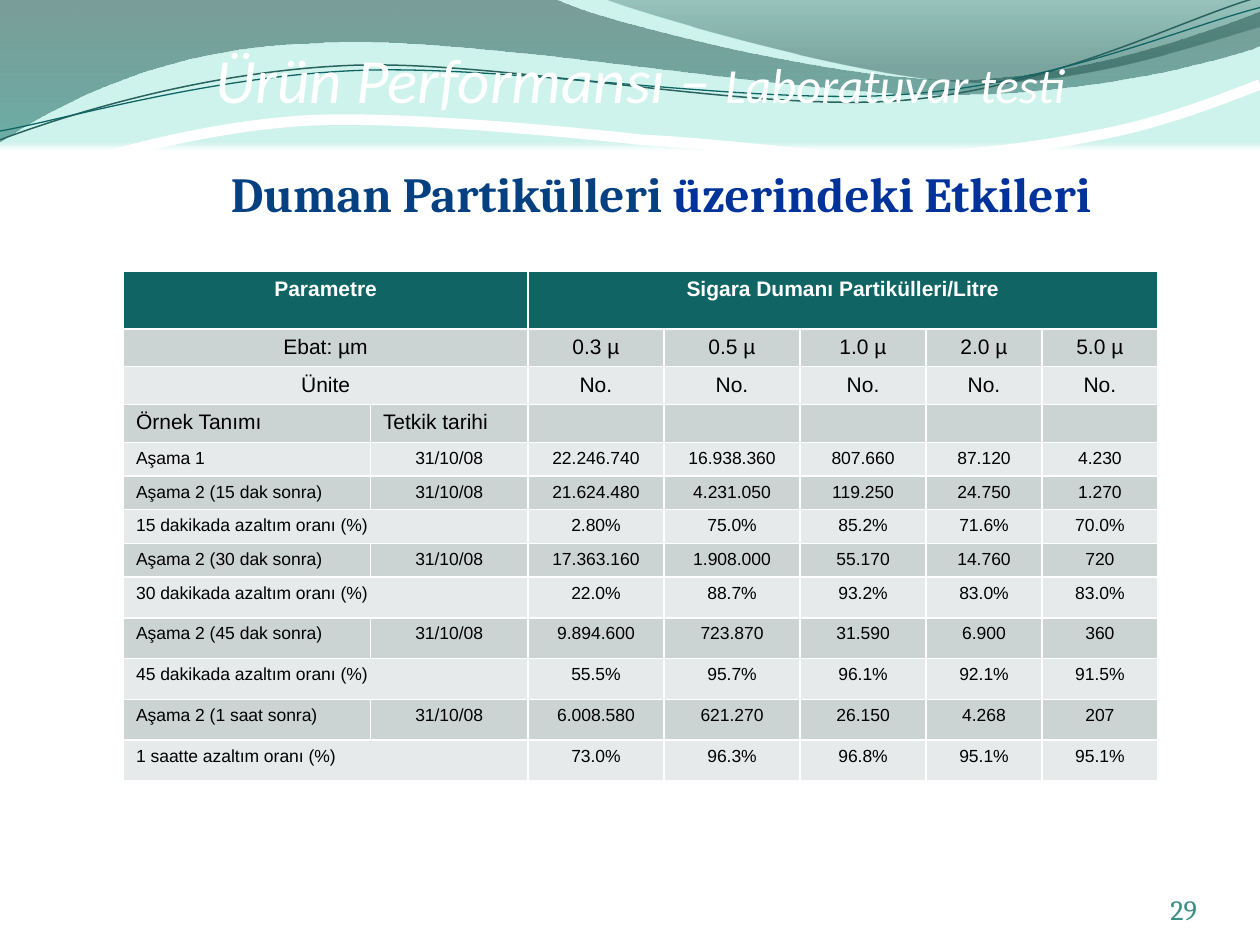
import pptx
import pptx.util
import pptx.dml.color
import pptx.enum.text
import pptx.oxml
import pptx.oxml.ns
import lxml.etree

COLORS = {
    "mint": "CEF2EC", "white": "FFFFFF", "black": "000000", "teal": "106464",
    "deep": "153A36", "sea": "1C746C", "pine": "1D5953", "moss": "154944",
    "thread": "2A625D", "number": "3E8E87", "navy": "054180", "blue": "00339A",
    "band": "CCD3D3", "pale": "E7EAEA",
}
WIDTH, HEIGHT = 10, 7.5

WAVES = {
    "left": [(0, 0), (4.4, -0.01), (4.76, 0.17, 6.64, 0.63, 7.58, 0.63),
             (8.53, 0.63, 9.58, 0.26, 10, 0.09), (10.01, 0.36),
             (9.83, 0.44, 8.7, 0.76, 7.46, 0.75), (6.22, 0.75, 3.82, 0.28, 2.57, 0.34),
             (1.29, 0.36, 0.46, 0.83, -0.01, 1.13)],
    "right": [(4.79, -0.01), (5.09, 0.11, 6.82, 0.62, 7.69, 0.65),
              (8.56, 0.69, 9.61, 0.32, 10, 0.21), (10, 0)],
    "upper thread": [(0, 1.11), (0.48, 0.93, 1.58, 0.57, 2.77, 0.52),
                     (3.95, 0.47, 5.93, 0.89, 7.13, 0.8), (8.33, 0.71, 9.38, 0.15, 9.98, -0.02)],
    "lower thread": [(0, 1.04), (0.47, 0.96, 1.64, 0.61, 2.83, 0.56),
                     (4.03, 0.51, 5.97, 0.84, 7.17, 0.75), (8.36, 0.67, 9.41, 0.21, 10, 0.06)],
    "ribbon": [(0.03, 1.48), (0.78, 1.25, 1.54, 1.02, 2.38, 0.96),
               (3.23, 0.9, 5.1, 1.11, 5.1, 1.11), (5.87, 1.15, 6.41, 1.25, 7, 1.25),
               (7.59, 1.25, 8.17, 1.18, 8.67, 1.08), (9.17, 0.99, 9.59, 0.83, 10, 0.67)],
}

TITLE = [("Ürün Performansı – ", 36, "white"), ("Laboratuvar testi", 28, "white")]
SUBTITLE = [("Duman Partikülleri ", 28, "navy"), ("üzerindeki Etkileri", 28, "blue")]
PAGE = [("29", 16, "number")]

DATE = "31/10/08"
RESULTS = [
    ("Parametre", "", ["Sigara Dumanı Partikülleri/Litre"]),
    ("Ebat: µm", "", ["0.3 µ", "0.5 µ", "1.0 µ", "2.0 µ", "5.0 µ"]),
    ("Ünite", "", ["No."] * 5),
    ("Örnek Tanımı", "Tetkik tarihi", [""] * 5),
    ("Aşama 1", DATE, ["22.246.740", "16.938.360", "807.660", "87.120", "4.230"]),
    ("Aşama 2 (15 dak sonra)", DATE, ["21.624.480", "4.231.050", "119.250", "24.750", "1.270"]),
    ("15 dakikada azaltım oranı (%)", "", ["2.80%", "75.0%", "85.2%", "71.6%", "70.0%"]),
    ("Aşama 2 (30 dak sonra)", DATE, ["17.363.160", "1.908.000", "55.170", "14.760", "720"]),
    ("30 dakikada azaltım oranı (%)", "", ["22.0%", "88.7%", "93.2%", "83.0%", "83.0%"]),
    ("Aşama 2 (45 dak sonra)", DATE, ["9.894.600", "723.870", "31.590", "6.900", "360"]),
    ("45 dakikada azaltım oranı (%)", "", ["55.5%", "95.7%", "96.1%", "92.1%", "91.5%"]),
    ("Aşama 2 (1 saat sonra)", DATE, ["6.008.580", "621.270", "26.150", "4.268", "207"]),
    ("1 saatte azaltım oranı (%)", "", ["73.0%", "96.3%", "96.8%", "95.1%", "95.1%"]),
]
COLUMN_WIDTHS = [1.96, 1.25, 1.08, 1.08, 1, 0.92, 0.92]
TALL_ROWS, TALL_SHARE = 5, 1.62
ROW_HEIGHTS = [0.46, 0.29, 0.24, 0.28] + [0.25] * 4 + [TALL_SHARE / TALL_ROWS] * TALL_ROWS
HEADING_ROWS, CENTRED_LABELS = 4, 3

ALIGN = pptx.enum.text.PP_ALIGN
ANCHOR = pptx.enum.text.MSO_ANCHOR
inches = pptx.util.Inches
qn = pptx.oxml.ns.qn


def rgb(name):
    return pptx.dml.color.RGBColor.from_string(COLORS[name])


def style(font, family, size, color, bold=False, italic=False):
    font.name, font.size = family, pptx.util.Pt(size)
    font.bold, font.italic = bold, italic
    font.color.rgb = rgb(color)


def paint_gradient(fill, stops):
    fill.gradient()
    fill.gradient_angle = 270
    for stop, (position, color, _) in zip(fill.gradient_stops, stops):
        stop.position = position
        stop.color.rgb = rgb(color)
    tints = fill._xPr.iter(qn("a:srgbClr"))
    for tint, (_, _, opacity) in zip(tints, stops):
        if opacity < 100:
            lxml.etree.SubElement(tint, qn("a:alpha")).set("val", str(opacity * 1000))


def bend(wave, segments):
    outline = next(wave._element.iter(qn("a:path")))
    for straight, segment in zip(list(outline)[1:], segments[1:]):
        if len(segment) == 2:
            continue
        curve = lxml.etree.Element(qn("a:cubicBezTo"))
        for x, y in zip(segment[::2], segment[1::2]):
            point = lxml.etree.SubElement(curve, qn("a:pt"))
            point.set("x", str(inches(x) - wave.left))
            point.set("y", str(inches(y) - wave.top))
        outline.replace(straight, curve)


def draw_wave(slide, key, stops=None, stroke=None):
    segments = WAVES[key]
    joints = [tuple(map(inches, segment[-2:])) for segment in segments]
    builder = slide.shapes.build_freeform(*joints[0])
    builder.add_line_segments(joints[1:], close=stops is not None)
    wave = builder.convert_to_shape()
    bend(wave, segments)
    wave.shadow.inherit = False
    if stops:
        paint_gradient(wave.fill, stops)
        wave.line.fill.background()
    else:
        color, weight = stroke
        wave.fill.background()
        wave.line.color.rgb = rgb(color)
        wave.line.width = pptx.util.Pt(weight)


def add_caption(slide, parts, box, family, align, anchor, margins, **emphasis):
    frame = slide.shapes.add_textbox(*map(inches, box)).text_frame
    frame.word_wrap = True
    frame.vertical_anchor = anchor
    (frame.margin_left, frame.margin_top,
     frame.margin_right, frame.margin_bottom) = map(inches, margins)
    paragraph = frame.paragraphs[0]
    paragraph.alignment = align
    for text, size, color in parts:
        run = paragraph.add_run()
        run.text = text
        style(run.font, family, size, color, **emphasis)


def border(cell):
    properties = cell._tc.get_or_add_tcPr()
    for index, side in enumerate("LRTB"):
        properties.insert(index, pptx.oxml.parse_xml(
            f'<a:ln{side} {pptx.oxml.ns.nsdecls("a")} w="12700"><a:solidFill>'
            f'<a:srgbClr val="{COLORS["white"]}"/></a:solidFill></a:ln{side}>'))


def add_results(slide):
    table = slide.shapes.add_table(
        len(RESULTS), len(COLUMN_WIDTHS), inches(0.98), inches(2.15),
        inches(sum(COLUMN_WIDTHS)), inches(sum(ROW_HEIGHTS))).table
    for column, width in zip(table.columns, COLUMN_WIDTHS):
        column.width = inches(width)
    for r, (label, date, values) in enumerate(RESULTS):
        table.rows[r].height = inches(ROW_HEIGHTS[r])
        size = 12 if r < HEADING_ROWS else 10
        background = "teal" if r == 0 else "band" if r % 2 else "pale"
        texts = [label, date] + values
        texts += [""] * (len(COLUMN_WIDTHS) - len(texts))
        for c, text in enumerate(texts):
            cell = table.cell(r, c)
            cell.fill.solid()
            cell.fill.fore_color.rgb = rgb(background)
            border(cell)
            cell.text_frame.text = text
            paragraph = cell.text_frame.paragraphs[0]
            left = r >= CENTRED_LABELS and c == 0 or r == CENTRED_LABELS
            paragraph.alignment = ALIGN.LEFT if left else ALIGN.CENTER
            for run in paragraph.runs:
                style(run.font, "Arial", size, "black" if r else "white", bold=r == 0)
            if not text:
                ending = lxml.etree.SubElement(paragraph._p, qn("a:endParaRPr"))
                ending.set("sz", str(size * 100))
        if not date:
            table.cell(r, 0).merge(table.cell(r, 1))
    table.cell(0, 2).merge(table.cell(0, len(COLUMN_WIDTHS) - 1))


def main():
    deck = pptx.Presentation()
    deck.slide_width, deck.slide_height = inches(WIDTH), inches(HEIGHT)
    slide = deck.slides.add_slide(deck.slide_layouts[6])
    paint_gradient(slide.background.fill, [(0.15, "mint", 100), (0.16, "white", 100)])
    draw_wave(slide, "left", stops=[(0, "deep", 45), (1, "sea", 55)])
    draw_wave(slide, "right", stops=[(0, "pine", 30), (0.8, "moss", 45)])
    draw_wave(slide, "upper thread", stroke=("thread", 0.85))
    draw_wave(slide, "lower thread", stroke=("teal", 0.75))
    add_caption(slide, TITLE, (0.58, 0, 9, 0.92), "Calibri", ALIGN.CENTER,
                ANCHOR.BOTTOM, (0, 0.05, 0, 0), italic=True)
    draw_wave(slide, "ribbon", stroke=("white", 6))
    add_caption(slide, PAGE, (8.67, 6.95, 0.83, 0.4), "Cambria", ALIGN.RIGHT,
                ANCHOR.BOTTOM, (0, 0, 0, 0))
    add_caption(slide, SUBTITLE, (0.83, 1.25, 8.83, 1.04), "Cambria", ALIGN.CENTER,
                ANCHOR.TOP, (0.1, 0.05, 0.1, 0.05), bold=True)
    add_results(slide)
    deck.save("out.pptx")


if __name__ == "__main__":
    main()
